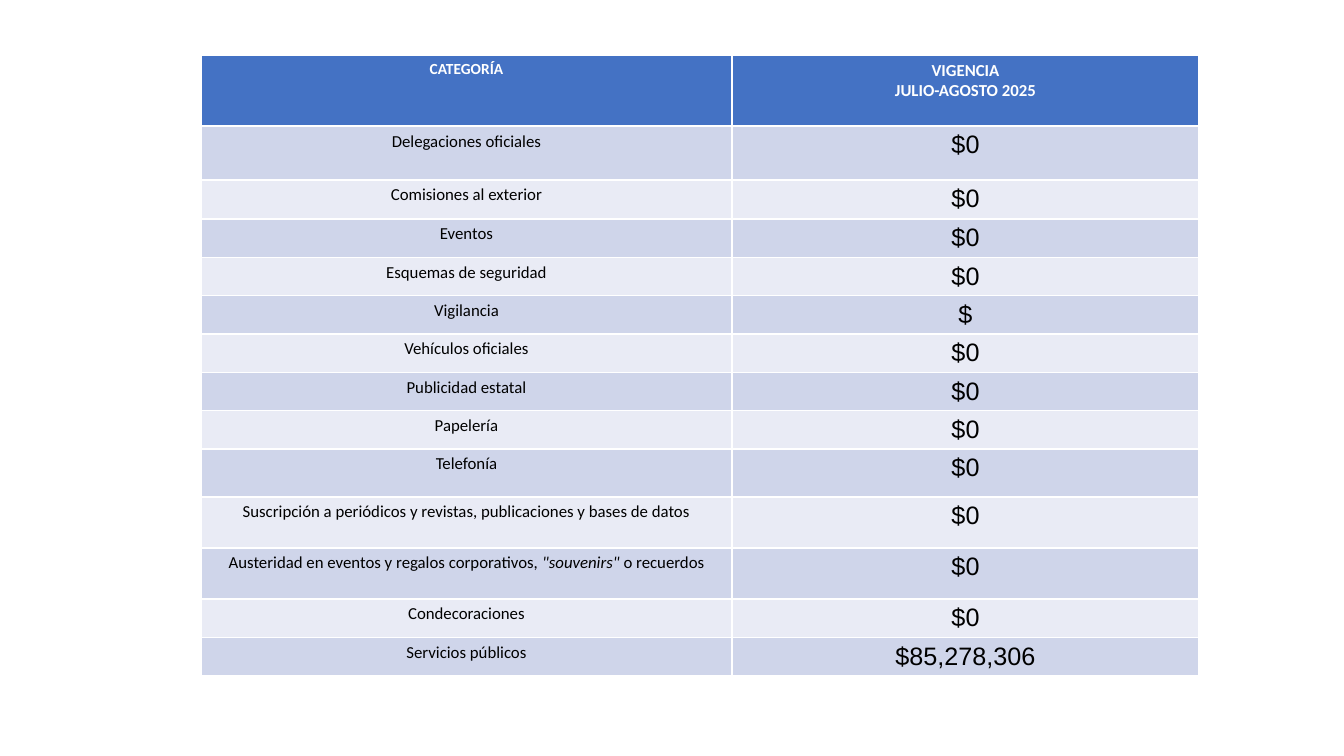
from pptx import Presentation
from pptx.dml.color import RGBColor
from pptx.enum.text import PP_ALIGN
from pptx.util import Emu, Pt

EMU_PER_PX = 9071
WHITE = RGBColor(0xFF, 0xFF, 0xFF)
BLACK = RGBColor(0x00, 0x00, 0x00)
HEADER_BLUE = RGBColor(0x44, 0x72, 0xC4)
BAND_DARK = RGBColor(0xCF, 0xD5, 0xEA)
BAND_LIGHT = RGBColor(0xE9, 0xEB, 0xF5)

COLUMN_WIDTHS = [531, 467]
ROW_HEIGHTS = [71, 54, 39] + [38] * 6 + [48, 51, 51, 38, 38]
EXPENSES = [
    (["Delegaciones oficiales"], "$0"),
    (["Comisiones al exterior"], "$0"),
    (["Eventos"], "$0"),
    (["Esquemas de seguridad"], "$0"),
    (["Vigilancia"], "$"),
    (["Vehículos oficiales"], "$0"),
    (["Publicidad estatal"], "$0"),
    (["Papelería"], "$0"),
    (["Telefonía"], "$0"),
    (["Suscripción a periódicos y revistas, publicaciones y bases de datos"], "$0"),
    (["Austeridad en eventos y regalos corporativos, ", '"souvenirs"', " o recuerdos"], "$0"),
    (["Condecoraciones"], "$0"),
    (["Servicios públicos"], "$85,278,306"),
]


def px(length):
    return Emu(length * EMU_PER_PX)


def add_grid(slide, left, top):
    frame = slide.shapes.add_table(
        len(ROW_HEIGHTS), len(COLUMN_WIDTHS), px(left), px(top),
        px(sum(COLUMN_WIDTHS)), px(sum(ROW_HEIGHTS)))
    table = frame.table
    for column, width in zip(table.columns, COLUMN_WIDTHS):
        column.width = px(width)
    for row, height in zip(table.rows, ROW_HEIGHTS):
        row.height = px(height)
    return table


def fill_cell(cell, lines, fill, color, size, font_name="Calibri", bold=False):
    cell.fill.solid()
    cell.fill.fore_color.rgb = fill
    text_frame = cell.text_frame
    for index, pieces in enumerate(lines):
        paragraph = text_frame.add_paragraph() if index else text_frame.paragraphs[0]
        paragraph.alignment = PP_ALIGN.CENTER
        font = paragraph.font
        font.name, font.size, font.bold = font_name, Pt(size), bold
        font.color.rgb = color
        for position, piece in enumerate(pieces):
            run = paragraph.add_run()
            run.text = piece
            if position % 2:
                run.font.italic = True


def main():
    presentation = Presentation()
    presentation.slide_width = px(1344)
    presentation.slide_height = px(756)
    slide = presentation.slides.add_slide(presentation.slide_layouts[6])

    table = add_grid(slide, 201, 55)
    fill_cell(table.cell(0, 0), [["CATEGORÍA"]], HEADER_BLUE, WHITE, 11, bold=True)
    fill_cell(table.cell(0, 1), [["VIGENCIA"], ["JULIO-AGOSTO 2025"]],
              HEADER_BLUE, WHITE, 12, bold=True)
    for row, (category, amount) in enumerate(EXPENSES, start=1):
        band = BAND_DARK if row % 2 else BAND_LIGHT
        fill_cell(table.cell(row, 0), [category], band, BLACK, 12)
        fill_cell(table.cell(row, 1), [[amount]], band, BLACK, 18, "Arial")

    presentation.save("out.pptx")


if __name__ == "__main__":
    main()
